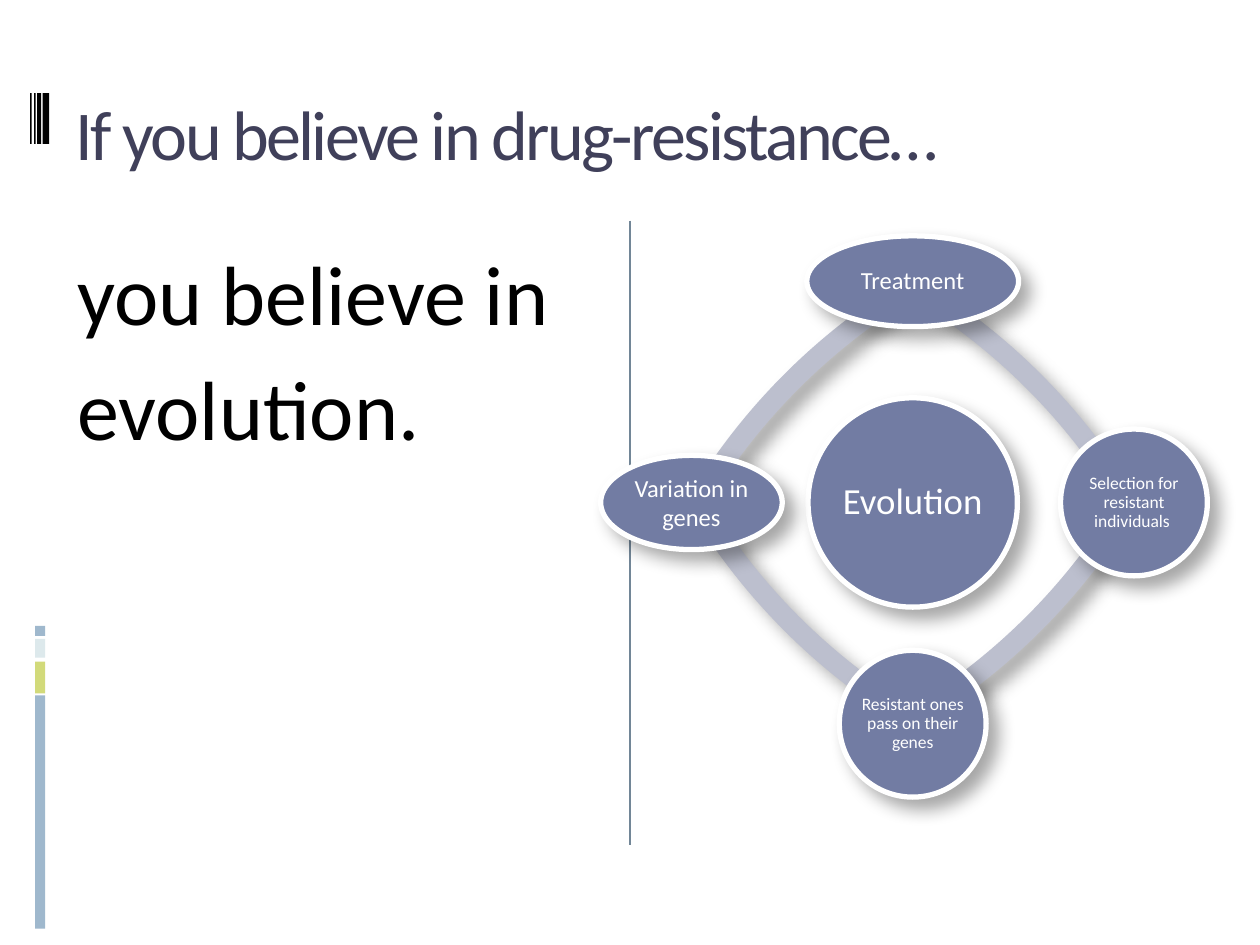
from dataclasses import dataclass

from lxml.etree import SubElement
from pptx import Presentation
from pptx.dml.color import RGBColor
from pptx.enum.shapes import MSO_CONNECTOR, MSO_SHAPE
from pptx.enum.text import MSO_ANCHOR, MSO_AUTO_SIZE, PP_ALIGN
from pptx.oxml.ns import qn
from pptx.util import Cm, Pt


@dataclass(frozen=True)
class Theme:
    font: str = "Calibri"
    black: str = "000000"
    white: str = "FFFFFF"
    title: str = "40405A"
    node: str = "727CA3"
    ring: str = "BCBFCE"
    rule: str = "728697"
    blue: str = "9FB8CD"
    green: str = "D2DA7A"
    pale: str = "DDE9EC"
    head: int = 40
    body: int = 48
    hub: int = 21
    large: int = 14
    small: int = 10


def write(frame, text, *, size, color, font, align=PP_ALIGN.LEFT,
          anchor=MSO_ANCHOR.MIDDLE, inset=None, spacing=1.0, before=0, track=0):
    """Fill a text frame with one paragraph; track is letter spacing in points."""
    frame.word_wrap = True
    frame.auto_size = MSO_AUTO_SIZE.NONE
    frame.vertical_anchor = anchor
    if inset is not None:
        frame.margin_left = frame.margin_right = Cm(inset)
        frame.margin_top = frame.margin_bottom = Cm(inset)
    para = frame.paragraphs[0]
    para.alignment = align
    para.line_spacing = spacing
    para.space_before = Pt(before)
    run = para.add_run()
    run.text = text
    run.font.name = font
    run.font.size = Pt(size)
    run.font.color.rgb = RGBColor.from_string(color)
    if track:
        run.font._element.set("spc", str(int(track * 100)))
    return para


class Deck:
    """Holds the theme and the current slide; all lengths are in centimetres."""

    def __init__(self, theme):
        self.theme = theme
        self.file = Presentation()
        self.file.slide_width, self.file.slide_height = Cm(25.4), Cm(19.05)
        self.slide = self.file.slides.add_slide(self.file.slide_layouts[1])

    def shape(self, kind, left, top, width, height, fill, edge=None):
        shape = self.slide.shapes.add_shape(
            kind, Cm(left), Cm(top), Cm(width), Cm(height))
        shape.shadow.inherit = False
        shape.fill.solid()
        shape.fill.fore_color.rgb = RGBColor.from_string(fill)
        if edge:
            shape.line.color.rgb = RGBColor.from_string(edge)
            shape.line.width = Pt(3)
        else:
            shape.line.fill.background()
        return shape

    def bar(self, left, top, width, height, fill):
        return self.shape(MSO_SHAPE.RECTANGLE, left, top, width, height, fill)

    def shade(self, shape):
        """Cast a soft shadow down and to the right."""
        effects = shape._element.spPr.find(qn("a:effectLst"))
        shadow = SubElement(effects, qn("a:outerShdw"), blurRad=str(Pt(10.2)),
                            dist=str(Pt(8)), dir="2700000", algn="tl", rotWithShape="0")
        color = SubElement(shadow, qn("a:srgbClr"), val=self.theme.black)
        SubElement(color, qn("a:alpha"), val="35000")

    def arc(self, x, y, size, start, span):
        """Draw a thin arc round x, y, with angles in degrees."""
        arc = self.shape(MSO_SHAPE.BLOCK_ARC, x - size / 2, y - size / 2,
                         size, size, self.theme.ring)
        for i, value in enumerate((start * 0.6, (start + span) * 0.6, 0.016)):
            arc.adjustments[i] = value
        self.shade(arc)

    def node(self, x, y, width, height, text, size, spacing=0.9):
        node = self.shape(MSO_SHAPE.OVAL, x - width / 2, y - height / 2,
                          width, height, self.theme.node, self.theme.white)
        self.shade(node)
        write(node.text_frame, text, size=size, color=self.theme.white,
              font=self.theme.font, align=PP_ALIGN.CENTER, inset=0, spacing=spacing)

    def rule(self, x, top, foot):
        line = self.slide.shapes.add_connector(
            MSO_CONNECTOR.STRAIGHT, Cm(x), Cm(top), Cm(x), Cm(foot))
        line.line.color.rgb = RGBColor.from_string(self.theme.rule)
        line.line.width = Pt(0.75)
        SubElement(line._element.spPr, qn("a:effectLst"))

    def place(self, index, left, top, width, height, text, **style):
        """Move and fill a placeholder, and return its paragraph."""
        holder = self.slide.placeholders[index]
        holder.left, holder.top = Cm(left), Cm(top)
        holder.width, holder.height = Cm(width), Cm(height)
        return write(holder.text_frame, text, font=self.theme.font, **style)

    def plain(self, para):
        """Take the bullet and its indent off a paragraph."""
        props = para._p.get_or_add_pPr()
        props.set("marL", "0")
        props.set("indent", "0")
        SubElement(props, qn("a:buNone"))


def main():
    theme = Theme()
    deck = Deck(theme)

    for top, height, fill in ((14.02, 4.7, theme.blue), (13.34, 0.64, theme.green),
                              (12.88, 0.38, theme.pale), (12.62, 0.2, theme.blue)):
        deck.bar(0.71, top, 0.2, height, fill)
    for left, width in ((0.86, 0.13), (0.75, 0.08), (0.69, 0.03), (0.61, 0.03)):
        deck.bar(left, 1.88, width, 1.02, theme.black)
    deck.rule(12.7, 4.45, 17.04)

    deck.place(0, 1.27, 0.58, 22.86, 4.19, "If you believe in drug-resistance…",
               size=theme.head, color=theme.title, track=-1.5)
    deck.plain(deck.place(1, 1.3, 4.45, 11.23, 12.57, "you believe in evolution.",
                          size=theme.body, color=theme.black,
                          anchor=MSO_ANCHOR.TOP, spacing=1.14, before=7))

    x, y = 18.4, 10.13
    shift, reach = 6.5, 4.46
    corners = ((-1, -1), (1, -1), (1, 1), (-1, 1))
    for turn, (across, down) in enumerate(corners):
        deck.arc(x + across * shift, y + down * shift, 25.7, 30.7 + 90 * turn, 28.6)

    deck.node(x, y, 4.22, 4.22, "Evolution", theme.hub)
    deck.node(x, y - reach, 4.27, 1.83, "Treatment", theme.large)
    deck.node(x + reach, y, 2.96, 2.96, "Selection for resistant individuals ", theme.small)
    deck.node(x, y + reach, 2.96, 2.96, "Resistant ones pass on their genes", theme.small)
    deck.node(x - reach, y, 3.66, 1.9, "Variation in genes", theme.large, spacing=1.0)

    deck.file.save("out.pptx")


if __name__ == "__main__":
    main()
